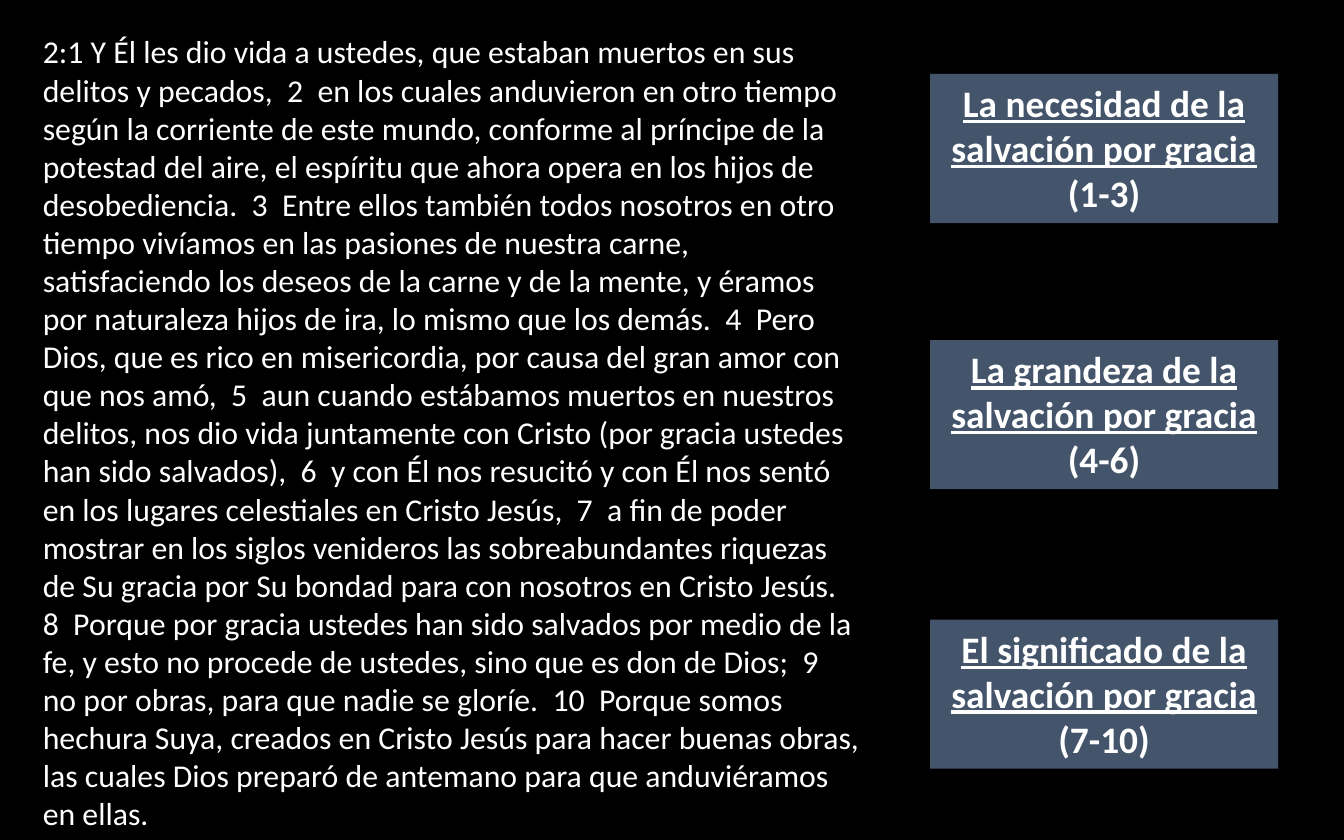
from pptx import Presentation
from pptx.dml.color import RGBColor
from pptx.enum.shapes import MSO_SHAPE
from pptx.enum.text import MSO_ANCHOR, MSO_AUTO_SIZE, PP_ALIGN
from pptx.util import Inches, Pt

BLACK = RGBColor(0x00, 0x00, 0x00)
WHITE = RGBColor(0xFF, 0xFF, 0xFF)
SLATE = RGBColor(0x44, 0x54, 0x6A)

# Content: verses 1 to 10, then the headings with their verse range and top
VERSES = [
    "2:1 Y Él les dio vida a ustedes, que estaban muertos en sus delitos y pecados,",
    "en los cuales anduvieron en otro tiempo según la corriente de este mundo, "
    "conforme al príncipe de la potestad del aire, el espíritu que ahora opera en "
    "los hijos de desobediencia.",
    "Entre ellos también todos nosotros en otro tiempo vivíamos en las pasiones de "
    "nuestra carne, satisfaciendo los deseos de la carne y de la mente, y éramos "
    "por naturaleza hijos de ira, lo mismo que los demás.",
    "Pero Dios, que es rico en misericordia, por causa del gran amor con que nos amó,",
    "aun cuando estábamos muertos en nuestros delitos, nos dio vida juntamente con "
    "Cristo (por gracia ustedes han sido salvados),",
    "y con Él nos resucitó y con Él nos sentó en los lugares celestiales en Cristo Jesús,",
    "a fin de poder mostrar en los siglos venideros las sobreabundantes riquezas de "
    "Su gracia por Su bondad para con nosotros en Cristo Jesús.",
    "Porque por gracia ustedes han sido salvados por medio de la fe, y esto no "
    "procede de ustedes, sino que es don de Dios;",
    "no por obras, para que nadie se gloríe.",
    "Porque somos hechura Suya, creados en Cristo Jesús para hacer buenas obras, las "
    "cuales Dios preparó de antemano para que anduviéramos en ellas.",
]
HEADINGS = [
    ("La necesidad de la salvación por gracia", "(1-3)", 0.55),
    ("La grandeza de la salvación por gracia", "(4-6)", 2.53),
    ("El significado de la salvación por gracia", "(7-10)", 4.61),
]


def add_run(p, text, **formats):
    r = p.add_run()
    r.text = text
    r.font.color.rgb = WHITE
    for name, value in {"name": "Calibri", **formats}.items():
        setattr(r.font, name, value)


prs = Presentation()
prs.slide_width, prs.slide_height = Inches(10), Inches(6.25)
s = prs.slides.add_slide(prs.slide_layouts[6])
s.background.fill.solid()
s.background.fill.fore_color.rgb = BLACK

# Bible passage, each verse after the first led by its number
passage = VERSES[0] + "".join(
    f"  {n}  {verse}" for n, verse in enumerate(VERSES[1:], start=2))
tf = s.shapes.add_textbox(
    Inches(0.22), Inches(0.19), Inches(6.28), Inches(6.11)).text_frame
tf.word_wrap = True
tf.auto_size = MSO_AUTO_SIZE.SHAPE_TO_FIT_TEXT
add_run(tf.paragraphs[0], passage, size=Pt(17))

# Section headings
for heading, verse_range, top in HEADINGS:
    sp = s.shapes.add_shape(
        MSO_SHAPE.RECTANGLE, Inches(6.92), Inches(top), Inches(2.59), Inches(1.11))
    sp.shadow.inherit = False
    sp.fill.solid()
    sp.fill.fore_color.rgb = SLATE
    sp.line.fill.background()
    tf = sp.text_frame
    tf.word_wrap = True
    tf.auto_size = MSO_AUTO_SIZE.SHAPE_TO_FIT_TEXT
    tf.vertical_anchor = MSO_ANCHOR.TOP
    for p, text, underline in (
            (tf.paragraphs[0], heading, True),
            (tf.add_paragraph(), verse_range, False)):
        p.alignment = PP_ALIGN.CENTER
        add_run(p, text, size=Pt(20), bold=True, underline=underline)

prs.save("out.pptx")
